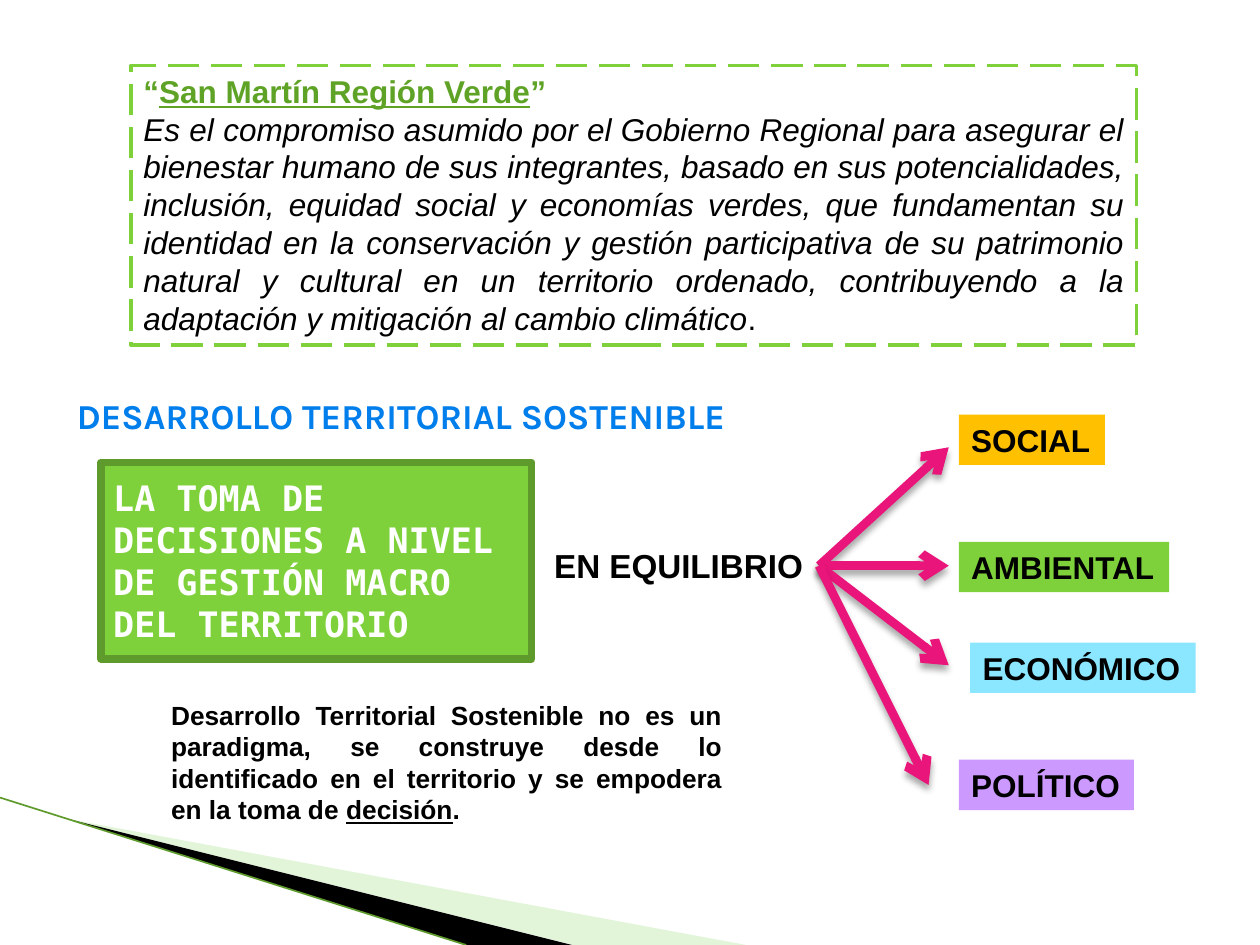
from lxml import etree
from pptx import Presentation
from pptx import util as u
from pptx.dml.color import RGBColor
from pptx.enum import dml, shapes, text
from pptx.oxml import ns

COLUMNS, ROWS = 100, 75
CELL = u.Inches(0.1)

BLACK = RGBColor(0x00, 0x00, 0x00)
WHITE = RGBColor(0xFF, 0xFF, 0xFF)
GREEN = RGBColor(0x7F, 0xD1, 0x3B)
DARK_GREEN = RGBColor(0x5E, 0x9B, 0x2C)
TEXT_GREEN = RGBColor(0x5F, 0xA3, 0x26)
PALE_GREEN = RGBColor(0xB8, 0xE7, 0xA1)
BLUE = RGBColor(0x00, 0x7E, 0xEB)
PINK = RGBColor(0xEA, 0x15, 0x7A)
AMBER = RGBColor(0xFF, 0xC0, 0x00)
SKY = RGBColor(0x8B, 0xE6, 0xFF)
LILAC = RGBColor(0xCC, 0x99, 0xFF)

LEFT, JUSTIFY = text.PP_ALIGN.LEFT, text.PP_ALIGN.JUSTIFY
TOP, MIDDLE = text.MSO_ANCHOR.TOP, text.MSO_ANCHOR.MIDDLE
LABEL = dict(name="Arial", size=u.Pt(18), bold=True, color=BLACK)


def cells(*counts):
    return [round(count * CELL) for count in counts]


def add_span(para, words, formats):
    span = para.add_run()
    span.text = words
    for name, value in formats.items():
        if name == "color":
            span.font.color.rgb = value
        else:
            setattr(span.font, name, value)


def write(box, paragraphs, anchor=TOP, wrap=True):
    frame = box.text_frame
    frame.auto_size = text.MSO_AUTO_SIZE.NONE
    frame.word_wrap = wrap
    frame.vertical_anchor = anchor
    for index, (alignment, spans) in enumerate(paragraphs):
        para = frame.add_paragraph() if index else frame.paragraphs[0]
        para.alignment = alignment
        for words, formats in spans:
            add_span(para, words, formats)


def add_panel(page, box, fill=None, line=None, width=1):
    panel = page.shapes.add_shape(shapes.MSO_SHAPE.RECTANGLE, *cells(*box))
    panel.shadow.inherit = False
    if fill is None:
        panel.fill.background()
    else:
        panel.fill.solid()
        panel.fill.fore_color.rgb = fill
    if line is None:
        panel.line.fill.background()
    else:
        panel.line.color.rgb = line
        panel.line.width = u.Pt(width)
    return panel


def add_line(page, start, end, color, width):
    line = page.shapes.add_connector(
        shapes.MSO_CONNECTOR.STRAIGHT, *cells(*start, *end))
    line.line.color.rgb = color
    line.line.width = u.Pt(width)
    effects = etree.SubElement(line._element.spPr, ns.qn("a:effectLst"))
    return line, effects


def add_wedge(page, points, color):
    corners = [cells(*point) for point in points]
    builder = page.shapes.build_freeform(*corners[0])
    builder.add_line_segments(corners[1:], close=True)
    wedge = builder.convert_to_shape()
    wedge.shadow.inherit = False
    wedge.fill.solid()
    wedge.fill.fore_color.rgb = color
    wedge.line.fill.background()
    return wedge


def add_swoosh(page, box):
    left, top, width, height = box
    bottom = top + height
    tip = (left + 5.4, top + 1.7)
    pale = add_wedge(page, [tip, (left + 59.2, bottom), (left + 45.5, bottom)], PALE_GREEN)
    color = pale._element.spPr.find(ns.qn("a:solidFill"))[0]
    etree.SubElement(color, ns.qn("a:alpha"), val="40000")
    add_wedge(page, [tip, (left + 45.4, bottom), (left + 37, bottom)], BLACK)
    add_line(page, (left, top), (left + 37, bottom), DARK_GREEN, 0.95)


def add_heading(page, box):
    title = page.shapes.title
    title.left, title.top, title.width, title.height = cells(*box)
    formats = dict(name="Karla", size=u.Pt(20), bold=True, color=BLUE)
    write(title, [(LEFT, [("DESARROLLO TERRITORIAL SOSTENIBLE", formats)])])


def add_commitment(page, box):
    panel = add_panel(page, box, line=GREEN, width=2.25)
    panel.line.dash_style = dml.MSO_LINE.LONG_DASH
    green = dict(LABEL, color=TEXT_GREEN)
    plain = dict(LABEL, bold=False)
    statement = (
        "Es el compromiso asumido por el Gobierno Regional para asegurar el "
        "bienestar humano de sus integrantes, basado en sus potencialidades, "
        "inclusión, equidad social y economías verdes, que fundamentan su "
        "identidad en la conservación y gestión participativa de su patrimonio "
        "natural y cultural en un territorio ordenado, contribuyendo a la "
        "adaptación y mitigación al cambio climático")
    write(panel, [
        (LEFT, [("“", green),
                ("San Martín Región Verde", dict(green, underline=True)),
                ("”", green)]),
        (JUSTIFY, [(statement, dict(plain, italic=True)), (".", plain)]),
    ])


def add_decision(page, box):
    panel = add_panel(page, box, GREEN, DARK_GREEN, 4.33)
    formats = dict(name="DejaVu Sans Mono", size=u.Pt(20), bold=True, color=WHITE)
    words = "LA TOMA DE DECISIONES A NIVEL DE GESTIÓN MACRO DEL TERRITORIO"
    write(panel, [(LEFT, [(words, formats)])], anchor=MIDDLE)


def add_explanation(page, box):
    formats = dict(LABEL, size=u.Pt(15))
    words = (
        "Desarrollo Territorial Sostenible no es un paradigma, se construye "
        "desde lo identificado en el territorio y se empodera en la toma de ")
    write(page.shapes.add_textbox(*cells(*box)), [
        (JUSTIFY, [(words, formats),
                   ("decisión", dict(formats, underline=True)),
                   (".", formats)]),
    ])


def add_arrow(page, hub, start, end):
    arrow, effects = add_line(page, start, end, PINK, 5)
    arrow.begin_connect(hub, 3)
    etree.SubElement(arrow.line._get_or_add_ln(), ns.qn("a:tailEnd"), type="arrow")
    shadow = etree.SubElement(
        effects, ns.qn("a:outerShdw"), blurRad=str(u.Pt(4)), dist=str(u.Pt(3)),
        dir="5400000", rotWithShape="0")
    color = etree.SubElement(shadow, ns.qn("a:srgbClr"), val=str(BLACK))
    etree.SubElement(color, ns.qn("a:alpha"), val="35000")


def add_balance(page, box):
    left, top, width, height = box
    hub_box = (left, top + 10, 22, 4.2)
    hub = page.shapes.add_textbox(*cells(*hub_box))
    write(hub, [(LEFT, [("EN EQUILIBRIO", dict(LABEL, size=u.Pt(19)))])], wrap=False)
    start = (left + 22, top + 12.1)
    dimensions = [
        ("SOCIAL", AMBER, (33.1, 0.1, 11.6), (32.3, 2.7)),
        ("AMBIENTAL", GREEN, (33.1, 10.2, 16.7), (32.3, 12.1)),
        ("ECONÓMICO", SKY, (34, 18.2, 17.9), (32.3, 20)),
        ("POLÍTICO", LILAC, (33.1, 27.5, 13.9), (30.7, 29.5)),
    ]
    for words, color, (column, row, span), (end_column, end_row) in dimensions:
        add_arrow(page, hub, start, (left + end_column, top + end_row))
        label = add_panel(page, (left + column, top + row, span, 4), color)
        write(label, [(LEFT, [(words, LABEL)])], wrap=False)


def main():
    deck = Presentation()
    deck.slide_width, deck.slide_height = cells(COLUMNS, ROWS)
    page = deck.slides.add_slide(deck.slide_layouts[5])
    add_swoosh(page, (0, 63.3, 60, 11.7))
    add_heading(page, (5.1, 30.8, 60.6, 4.4))
    add_commitment(page, (10.4, 5.2, 79.8, 22.2))
    add_explanation(page, (12.6, 55, 45.7, 11.1))
    add_decision(page, (8, 36.7, 34.2, 15.6))
    add_balance(page, (43, 32.8, 52, 32))
    deck.save("out.pptx")


if __name__ == "__main__":
    main()
